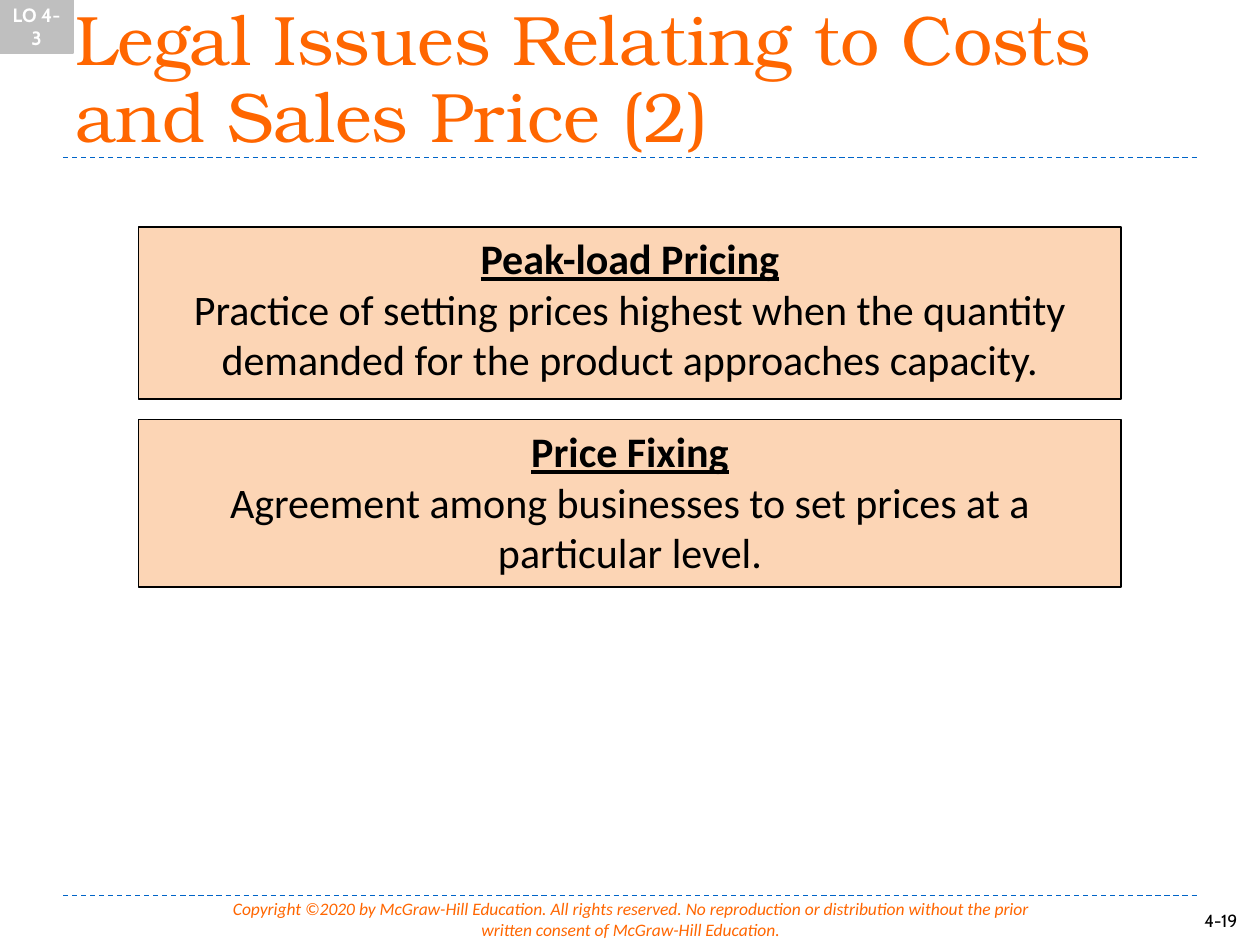
import dataclasses

import pptx
import pptx.dml.color
import pptx.enum.dml
import pptx.enum.shapes
import pptx.enum.text
import pptx.oxml
import pptx.oxml.ns
import pptx.util
from pptx.util import Inches

ALIGN = pptx.enum.text.PP_ALIGN
ANCHOR = pptx.enum.text.MSO_ANCHOR


@dataclasses.dataclass(frozen=True)
class Theme:
    orange: str = "FF6600"
    black: str = "000000"
    white: str = "FFFFFF"
    peach: str = "FCD5B5"
    gray: str = "BFBFBF"
    blue: str = "0064C8"
    title_font: str = "TeX Gyre Bonum"
    body_font: str = "Calibri"
    label_font: str = "Cabin"
    title_size: int = 40
    title_spacing: int = 44
    body_size: int = 24
    badge_size: int = 11
    footer_size: int = 10


THEME = Theme()
DEFINITIONS = [
    (1.8, 1.37, "Peak-load Pricing",
     "Practice of setting prices highest when the quantity demanded "
     "for the product approaches capacity."),
    (3.33, 1.33, "Price Fixing",
     "Agreement among businesses to set prices at a particular level."),
]


def rgb(color):
    return pptx.dml.color.RGBColor.from_string(color)


def write(paragraph, text, name, size, color, align=ALIGN.LEFT,
          bold=False, italic=False, underline=False):
    paragraph.text = text
    paragraph.alignment = align
    font = paragraph.font
    font.name = name
    font.size = pptx.util.Pt(size)
    font.color.rgb = rgb(color)
    font.bold = bold
    font.italic = italic
    font.underline = underline


def add_rule(slide, top):
    rule = slide.shapes.add_connector(
        pptx.enum.shapes.MSO_CONNECTOR.STRAIGHT,
        Inches(0.5), Inches(top), Inches(9.5), Inches(top))
    rule.line.color.rgb = rgb(THEME.blue)
    rule.line.width = pptx.util.Pt(0.75)
    rule.line.dash_style = pptx.enum.dml.MSO_LINE.DASH
    rule._element.spPr.append(
        pptx.oxml.parse_xml(f"<a:effectLst {pptx.oxml.ns.nsdecls('a')}/>"))


def add_text(slide, left, top, width, height, anchor=ANCHOR.TOP):
    box = slide.shapes.add_textbox(
        Inches(left), Inches(top), Inches(width), Inches(height))
    box.text_frame.word_wrap = True
    box.text_frame.vertical_anchor = anchor
    return box.text_frame.paragraphs[0]


def add_rectangle(slide, left, top, width, height, fill, line, line_width, anchor):
    rectangle = slide.shapes.add_shape(
        pptx.enum.shapes.MSO_SHAPE.RECTANGLE,
        Inches(left), Inches(top), Inches(width), Inches(height))
    rectangle.shadow.inherit = False
    rectangle.fill.solid()
    rectangle.fill.fore_color.rgb = rgb(fill)
    rectangle.line.color.rgb = rgb(line)
    rectangle.line.width = pptx.util.Pt(line_width)
    rectangle.text_frame.word_wrap = True
    rectangle.text_frame.vertical_anchor = anchor
    return rectangle.text_frame


def add_definition(slide, top, height, term, meaning):
    frame = add_rectangle(slide, 1.1, top, 7.8, height,
                          THEME.peach, THEME.black, 1, ANCHOR.TOP)
    style = (THEME.body_font, THEME.body_size, THEME.black, ALIGN.CENTER)
    write(frame.paragraphs[0], term, *style, bold=True, underline=True)
    write(frame.add_paragraph(), meaning, *style)


def add_badge(slide, text):
    frame = add_rectangle(slide, 0, 0, 0.58, 0.42,
                          THEME.gray, THEME.gray, 1.5, ANCHOR.MIDDLE)
    write(frame.paragraphs[0], text, THEME.label_font, THEME.badge_size,
          THEME.white, ALIGN.CENTER, bold=True)


def add_title(slide, text):
    paragraph = add_text(slide, 0.5, 0.29, 9, 1, ANCHOR.BOTTOM)
    write(paragraph, text, THEME.title_font, THEME.title_size, THEME.orange)
    paragraph.line_spacing = pptx.util.Pt(THEME.title_spacing)


def add_footer(slide, number, copyright_line):
    write(add_text(slide, 9.46, 7.17, 0.5, 0.25), number,
          THEME.label_font, THEME.footer_size, THEME.black)
    write(add_text(slide, 1.67, 7.08, 6.67, 0.44), copyright_line,
          THEME.body_font, THEME.footer_size, THEME.orange,
          ALIGN.CENTER, italic=True)


def main():
    presentation = pptx.Presentation()
    presentation.slide_width = Inches(10)
    presentation.slide_height = Inches(7.5)
    slide = presentation.slides.add_slide(presentation.slide_layouts[6])
    for top in (7.11, 1.25):
        add_rule(slide, top)
    add_footer(slide, "4-19",
               "Copyright ©2020 by McGraw-Hill Education. All rights reserved. "
               "No reproduction or distribution without the prior written "
               "consent of McGraw-Hill Education.")
    for definition in DEFINITIONS:
        add_definition(slide, *definition)
    add_badge(slide, "LO 4-3")
    add_title(slide, "Legal Issues Relating to Costs and Sales Price (2)")
    presentation.save("out.pptx")


if __name__ == "__main__":
    main()
